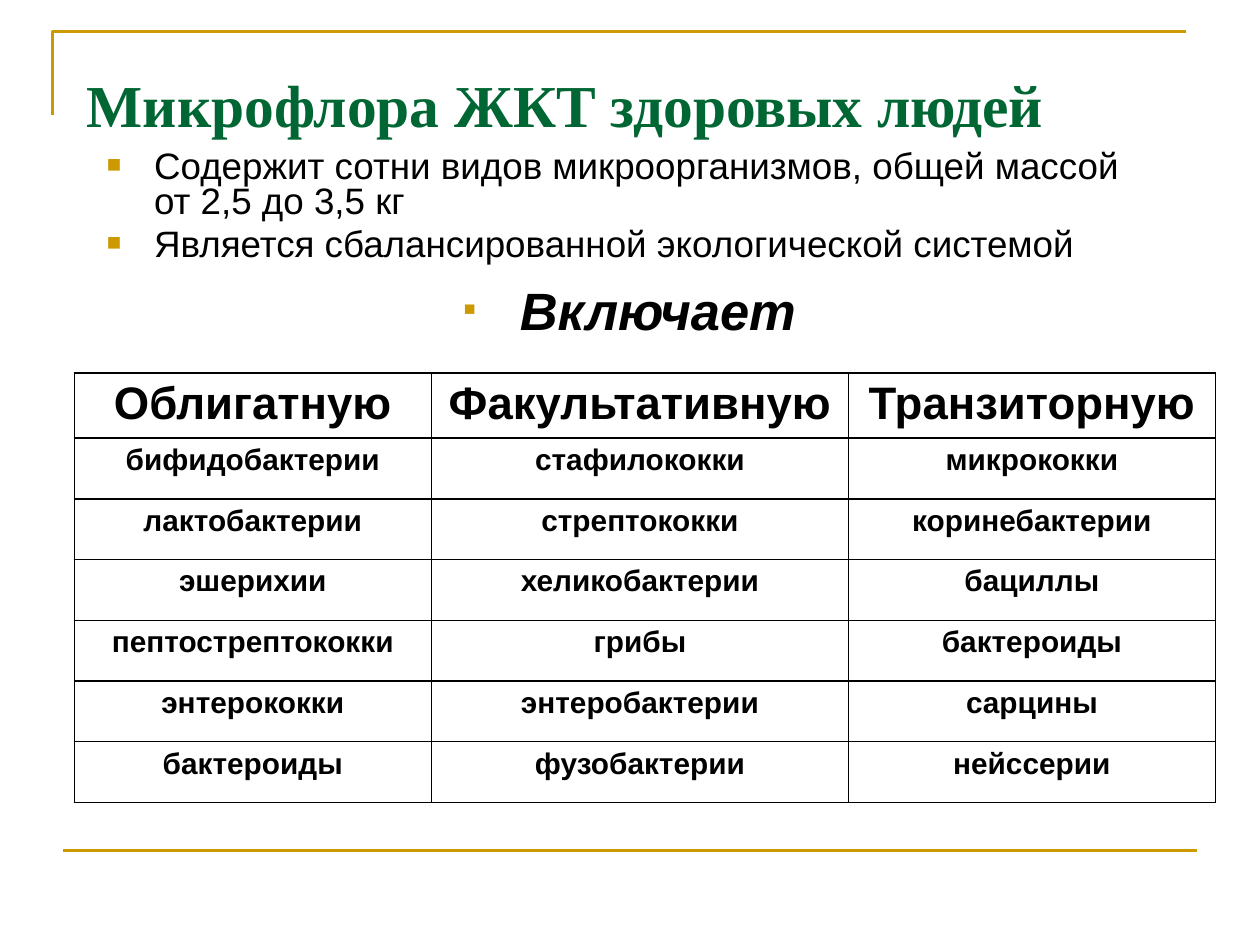
from lxml.etree import SubElement
from pptx import Presentation
from pptx.dml.color import RGBColor
from pptx.enum.shapes import MSO_CONNECTOR
from pptx.enum.text import MSO_ANCHOR, PP_ALIGN
from pptx.oxml.ns import qn
from pptx.util import Pt

GOLD = RGBColor(0xCC, 0x99, 0x00)
GREEN = RGBColor(0x00, 0x66, 0x33)
BLACK = RGBColor(0x00, 0x00, 0x00)

TITLE = "Микрофлора ЖКТ здоровых людей"
FACTS = [
    "Содержит сотни видов микроорганизмов, общей массой от 2,5 до 3,5 кг",
    "Является сбалансированной экологической системой",
]
FLORA = [
    ("Облигатную", "Факультативную", "Транзиторную"),
    ("бифидобактерии", "стафилококки", "микрококки"),
    ("лактобактерии", "стрептококки", "коринебактерии"),
    ("эшерихии", "хеликобактерии", "бациллы"),
    ("пептострептококки", "грибы", "бактероиды"),
    ("энтерококки", "энтеробактерии", "сарцины"),
    ("бактероиды", "фузобактерии", "нейссерии"),
]
COLUMN_WIDTHS = (204, 238.5, 209.5)
HEADER_HEIGHT, ROW_HEIGHT = 36, 34.7


def write(paragraph, text, size, font="Arial", color=BLACK, bold=False,
          italic=False, align=PP_ALIGN.LEFT, before=0, spacing=1.0):
    paragraph.alignment = align
    paragraph.space_before = Pt(before)
    paragraph.line_spacing = spacing
    run = paragraph.add_run()
    run.text = text
    run.font.name = font
    run.font.size = Pt(size)
    run.font.bold = bold
    run.font.italic = italic
    run.font.color.rgb = color


def add_bullet(paragraph, percent, indent):
    """Give the paragraph a gold square bullet with a hanging indent."""
    properties = paragraph._p.get_or_add_pPr()
    properties.set("marL", str(Pt(indent)))
    properties.set("indent", str(-Pt(indent)))
    color = SubElement(properties, qn("a:buClr"))
    SubElement(color, qn("a:srgbClr"), val=str(GOLD))
    SubElement(properties, qn("a:buSzPct"), val=str(percent * 1000))
    SubElement(properties, qn("a:buFont"), typeface="Arial")
    SubElement(properties, qn("a:buChar"), char="■")


def add_frame(slide):
    """Draw the gold corner at the top and the gold rule at the bottom."""
    builder = slide.shapes.build_freeform(Pt(30), Pt(66))
    builder.add_line_segments([(Pt(30), Pt(18)), (Pt(678), Pt(18))], close=False)
    corner = builder.convert_to_shape()
    corner.fill.background()
    corner.shadow.inherit = False
    rule = slide.shapes.add_connector(
        MSO_CONNECTOR.STRAIGHT, Pt(36), Pt(486), Pt(684), Pt(486))
    SubElement(rule._element.spPr, qn("a:effectLst"))
    for outline in (corner, rule):
        outline.line.color.rgb = GOLD
        outline.line.width = Pt(1.5)


def add_title(slide):
    title = slide.shapes.title
    title.left, title.top, title.width, title.height = Pt(42.5), Pt(31.7), Pt(612), Pt(54.7)
    title.text_frame.vertical_anchor = MSO_ANCHOR.MIDDLE
    write(title.text_frame.paragraphs[0], TITLE, 34,
          font="Times New Roman", color=GREEN, bold=True)


def add_facts(slide):
    frame = slide.shapes.add_textbox(Pt(54), Pt(82.8), Pt(612), Pt(130.3)).text_frame
    frame.word_wrap = True
    paragraph = frame.paragraphs[0]
    for fact in FACTS:
        write(paragraph, fact, 21, before=4.2, spacing=0.8)
        add_bullet(paragraph, 65, 27)
        paragraph = frame.add_paragraph()
    write(paragraph, "Включает", 30, bold=True, italic=True,
          align=PP_ALIGN.CENTER, before=15, spacing=0.8)
    add_bullet(paragraph, 37, 32)


def add_borders(cell):
    properties = cell._tc.get_or_add_tcPr()
    for side in ("lnL", "lnR", "lnT", "lnB"):
        border = SubElement(properties, qn(f"a:{side}"), w=str(Pt(1)))
        fill = SubElement(border, qn("a:solidFill"))
        SubElement(fill, qn("a:srgbClr"), val=str(BLACK))


def add_flora_table(slide):
    height = HEADER_HEIGHT + ROW_HEIGHT * (len(FLORA) - 1)
    table = slide.shapes.add_table(
        len(FLORA), len(COLUMN_WIDTHS), Pt(42.5), Pt(213.2),
        Pt(sum(COLUMN_WIDTHS)), Pt(height)).table
    for column, width in zip(table.columns, COLUMN_WIDTHS):
        column.width = Pt(width)
    for index, (row, names) in enumerate(zip(table.rows, FLORA)):
        is_header = index == 0
        row.height = Pt(HEADER_HEIGHT if is_header else ROW_HEIGHT)
        for cell, name in zip(row.cells, names):
            cell.margin_top = cell.margin_bottom = Pt(3)
            add_borders(cell)
            cell.fill.background()
            write(cell.text_frame.paragraphs[0], name, 26 if is_header else 17,
                  bold=True, align=PP_ALIGN.CENTER)


def main():
    presentation = Presentation()
    presentation.slide_width, presentation.slide_height = Pt(720), Pt(540)
    slide = presentation.slides.add_slide(presentation.slide_layouts[5])
    add_frame(slide)
    add_title(slide)
    add_facts(slide)
    add_flora_table(slide)
    presentation.save("out.pptx")


if __name__ == "__main__":
    main()
